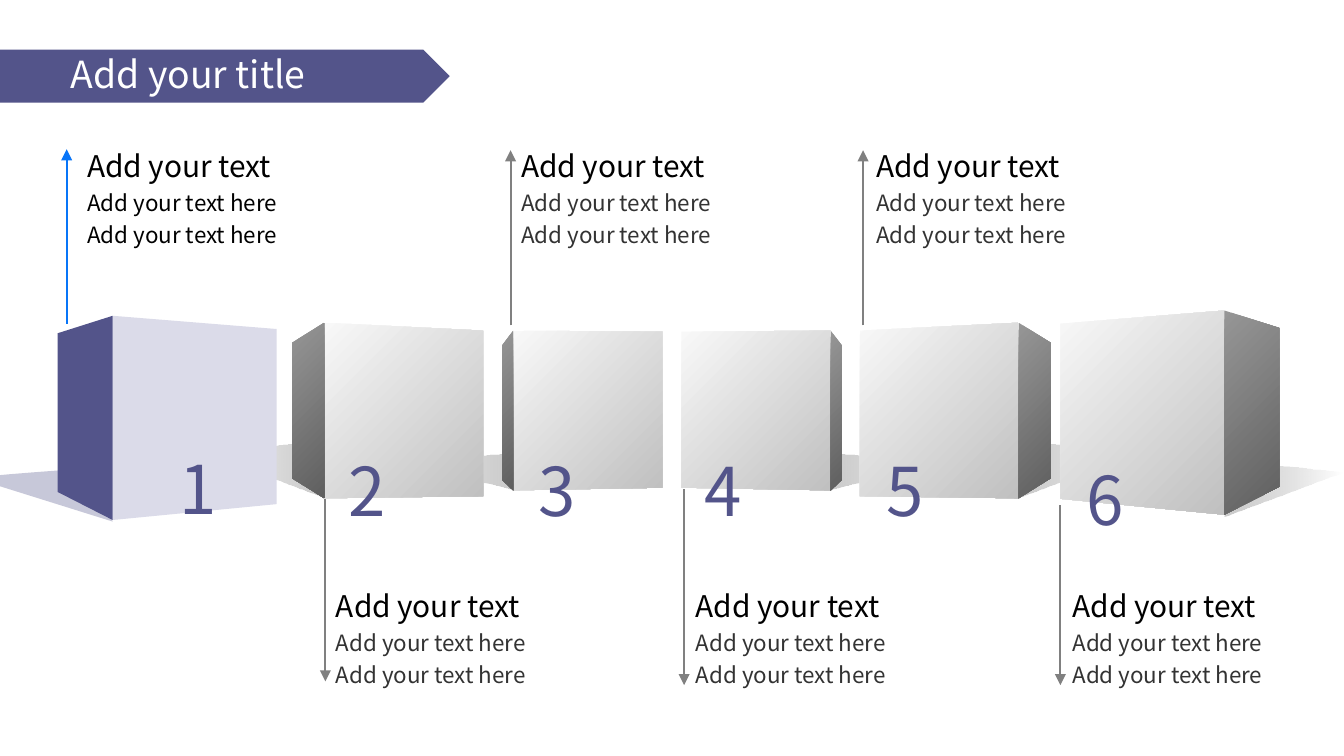
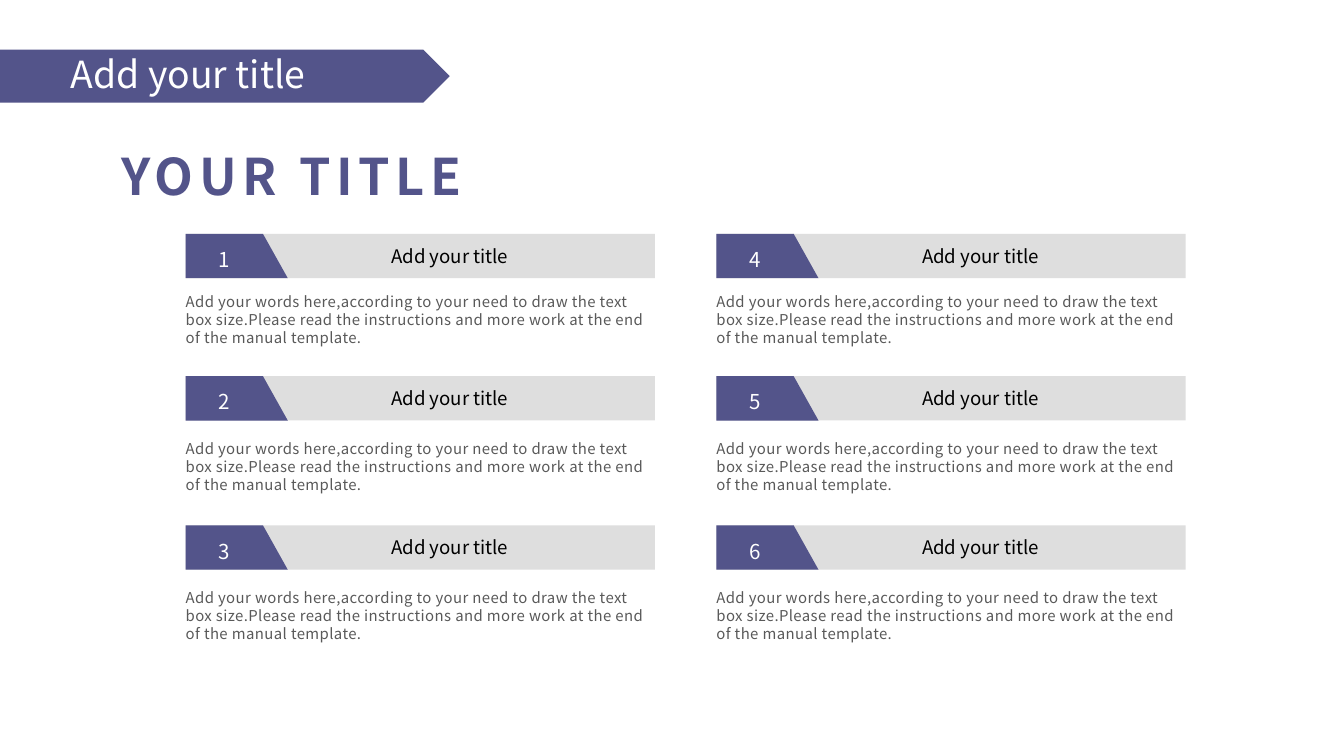
from lxml import etree
from pptx import Presentation
from pptx import util as u
from pptx.dml.color import RGBColor
from pptx.enum import shapes, text
from pptx.oxml.ns import qn

FONT = "Noto Sans CJK JP"
COLORS = {
    "main": "53548A", "pale": "DBDBE9", "bar": "DEDEDE", "white": "FFFFFF",
    "black": "000000", "dark": "333333", "body": "595959", "blue": "0875F8",
    "gray": "808080", "front_a": "F8F8F8", "front_b": "C0C0C0",
    "side_a": "969696", "side_b": "5F5F5F", "shade": "666666",
}
BODY = ("Add your words here,according to your need to draw the text box size."
        "Please read the instructions and more work at the end of the manual template.")
CENTER = text.PP_ALIGN.CENTER
GROW = text.MSO_AUTO_SIZE.SHAPE_TO_FIT_TEXT
MARGINS = ("margin_left", "margin_top", "margin_right", "margin_bottom")
NO_MARGIN = dict.fromkeys(MARGINS, 0)

# Heights are (top, bottom) pairs; widths run from the corner edge.
PROFILES = {
    "outer": dict(corner=(5.97, 9.83), front=(3.1, 6.22, 9.53), side=(1.04, 6.3, 9.3),
                  base=9.86, tip=9.04, back=(0.28, 8.84)),
    "middle": dict(corner=(6.1, 9.42), front=(3, 6.25, 9.38), side=(0.61, 6.48, 9.04),
                   base=9.41, tip=8.56, back=(0.25, 8.36)),
    "inner": dict(corner=(6.25, 9.27), front=(2.82, 6.27, 9.22), side=(0.21, 6.53, 9.07),
                  base=9.25, tip=8.71, back=(0.18, 8.59)),
}
# number, profile, corner x, outward direction, shadow reach, lift, number x, number y
CUBES = [
    (3, "inner", 9.7, -1, 2.26, 0, 9.93, 8.36),
    (4, "inner", 15.7, 1, 2.26, 0, 13.08, 8.36),
    (5, "middle", 19.25, 1, 2.26, 0, 16.51, 8.36),
    (6, "outer", 23.14, 1, 2.24, 0.1, 20.3, 8.53),
    (2, "middle", 6.13, -1, 2.26, 0, 6.35, 8.36),
    (1, "outer", 2.13, -1, 2.62, 0, 3.15, 8.33),
]
# label x, label y, arrow x, arrow start, arrow tip
LABELS = [
    (1.4, 2.54, 1.26, 6.12, 2.82), (9.6, 2.54, 9.65, 6.15, 2.84),
    (16.31, 2.54, 16.31, 6.15, 2.84), (6.1, 10.85, 6.15, 9.42, 12.88),
    (12.9, 10.85, 12.93, 9.25, 12.95), (20.02, 10.85, 20.04, 9.55, 12.95),
]


def rgb(name):
    return RGBColor.from_string(COLORS[name])


def set_attrs(obj, values):
    for key, value in values.items():
        setattr(obj, key, value)


def sub(parent, tag, **attrs):
    return etree.SubElement(parent, qn(tag), attrs)


def paint(sp, fill, alphas=(), angle=0):
    sp.shadow.inherit = False
    sp.line.fill.background()
    if isinstance(fill, str):
        sp.fill.solid()
        sp.fill.fore_color.rgb = rgb(fill)
    else:
        sp.fill.gradient()
        sp.fill.gradient_angle = angle
        for stop, name in zip(sp.fill.gradient_stops, fill):
            stop.color.rgb = rgb(name)
    for clr, alpha in zip(sp._element.spPr.iter(qn("a:srgbClr")), alphas):
        sub(clr, "a:alpha", val=str(alpha * 1000))


def add_box(slide, kind, x, y, w, h, fill):
    sp = slide.shapes.add_shape(kind, *map(u.Cm, (x, y, w, h)))
    paint(sp, fill)


def add_outline(slide, points, fill, **style):
    pts = [(u.Cm(x), u.Cm(y)) for x, y in points]
    builder = slide.shapes.build_freeform(*pts[0])
    builder.add_line_segments(pts[1:], close=True)
    paint(builder.convert_to_shape(), fill, **style)


def add_text(slide, x, y, w, h, lines, frame=None, para=None, spc=0):
    tf = slide.shapes.add_textbox(*map(u.Cm, (x, y, w, h))).text_frame
    set_attrs(tf, {"word_wrap": True, **(frame or {})})
    for i, (words, size, color, bold) in enumerate(lines):
        p = tf.add_paragraph() if i else tf.paragraphs[0]
        set_attrs(p, para or {})
        r = p.add_run()
        r.text = words
        set_attrs(r.font, {"name": FONT, "size": u.Pt(size), "bold": bold})
        r.font.color.rgb = rgb(color)
        if spc:
            r.font._element.set("spc", str(spc))


def add_arrow(slide, x, start, tip, color):
    cx = slide.shapes.add_connector(shapes.MSO_CONNECTOR.STRAIGHT,
                                    *map(u.Cm, (x, start, x, tip)))
    cx.line.width = u.Pt(1)
    cx.line.color.rgb = rgb(color)
    sub(cx.line._get_or_add_ln(), "a:tailEnd", type="triangle")
    sub(cx._element.spPr, "a:effectLst")


def bezier(a, b, c, d, steps=8):
    for i in range(1, steps + 1):
        t = i / steps
        weights = ((1 - t) ** 3, 3 * t * (1 - t) ** 2, 3 * t * t * (1 - t), t ** 3)
        yield tuple(sum(k * p[n] for k, p in zip(weights, (a, b, c, d))) for n in (0, 1))


def add_cube(slide, number, profile, corner_x, out, reach, lift, num_x, num_y):
    form = PROFILES[profile]
    active = number == 1

    def at(dx, y):
        return corner_x + out * dx, y - lift

    def face(dx, top, bottom):
        near_top, near_bottom = form["corner"]
        return [at(0, near_top), at(0, near_bottom), at(dx, bottom), at(dx, top)]

    base, back = at(0, form["base"]), at(*form["back"])
    near_tip = at(reach - 0.1, form["tip"] + 0.03)
    tip, past_tip = at(reach, form["tip"]), at(reach + 0.1, form["tip"] - 0.03)
    shadow = [base, *bezier(base, base, near_tip, tip), *bezier(tip, past_tip, back, back)]
    if active:
        add_outline(slide, shadow, "main", alphas=(32,))
    else:
        add_outline(slide, shadow, ("white", "shade")[::-out], alphas=(50, 34)[::-out])
    width, top, bottom = form["front"]
    add_outline(slide, face(-width, top, bottom),
                "pale" if active else ("front_a", "front_b"), angle=315)
    add_outline(slide, face(*form["side"]),
                "main" if active else ("side_a", "side_b"), angle=315)
    add_text(slide, num_x, num_y, 0.49, 0.79, [(str(number), 36, "main", False)],
             {"word_wrap": False}, {"alignment": CENTER})


def add_label(slide, x, y, arrow_x, start, tip, active):
    small = ("Add your text here", 12, "black" if active else "dark", False)
    add_text(slide, x, y, 5.28, 2.31, [("Add your text", 16, "black", False), small, small],
             {"auto_size": GROW}, {"line_spacing": 1.2})
    add_arrow(slide, arrow_x, start, tip, "blue" if active else "gray")


def add_card(slide, number, x, y, body_y):
    add_box(slide, shapes.MSO_SHAPE.RECTANGLE, x, y, 8.87, 0.84, "bar")
    add_outline(slide, [(x, y), (x + 1.46, y), (x + 1.93, y + 0.84), (x, y + 0.84)], "main")
    add_text(slide, x + 2.34, y, 5.3, 0.84, [("Add your title", 10, "black", False)],
             {"vertical_anchor": text.MSO_ANCHOR.MIDDLE}, {"alignment": CENTER})
    flush = {**NO_MARGIN, "auto_size": GROW}
    add_text(slide, x, y + 0.25, 1.45, 0.48, [(str(number), 11, "white", False)],
             flush, {"alignment": CENTER})
    add_text(slide, x, body_y, 8.87, 1.37, [(BODY, 8, "body", False)], flush, spc=20)


def new_slide(prs):
    slide = prs.slides.add_slide(prs.slide_layouts[6])
    add_box(slide, shapes.MSO_SHAPE.PENTAGON, 0, 0.94, 8.5, 1, "main")
    add_text(slide, 1.09, 0.84, 6.86, 1.19, [("Add your title", 20, "white", False)])
    return slide


def main():
    prs = Presentation()
    prs.slide_width, prs.slide_height = u.Cm(25.4), u.Cm(14.29)

    s = new_slide(prs)
    for i, label in enumerate(LABELS):
        add_label(s, *label, active=i == 0)
    for cube in CUBES:
        add_cube(s, *cube)

    s = new_slide(prs)
    rows = [(4.42, 5.54), (7.11, 8.31), (9.93, 11.13)]
    for col, x in enumerate((3.51, 13.54)):
        for row, (y, body_y) in enumerate(rows):
            add_card(s, col * len(rows) + row + 1, x, y, body_y)
    add_text(s, 2.11, 2.64, 8.1, 1.35, [("YOUR TITLE", 27, "main", True)],
             {**dict(zip(MARGINS, map(u.Cm, (0.18, 0.1, 0.18, 0.1)))), "auto_size": GROW},
             spc=300)

    prs.save("out.pptx")


if __name__ == "__main__":
    main()
